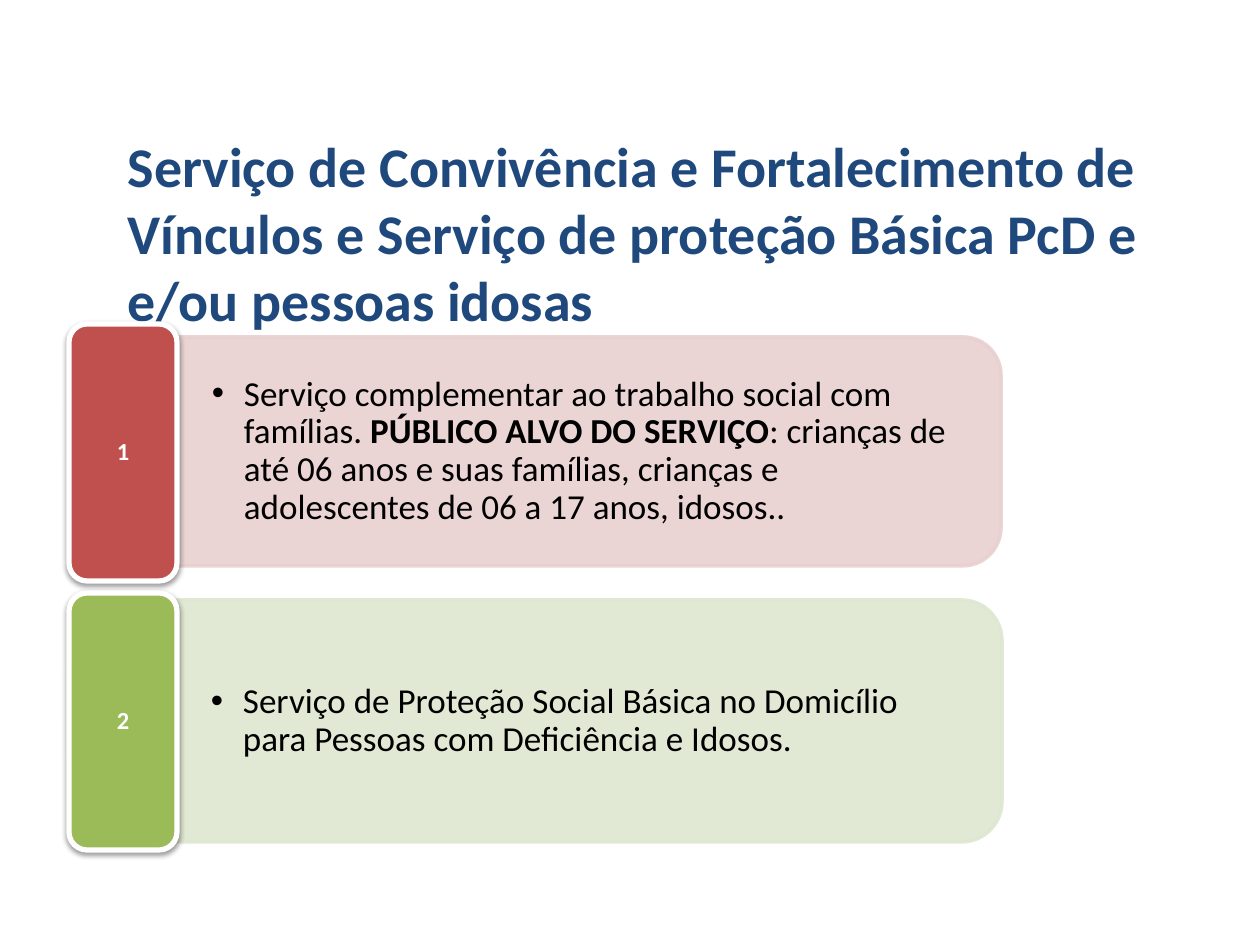
from lxml.etree import SubElement
from pptx import Presentation
from pptx.dml.color import RGBColor
from pptx.enum.shapes import MSO_SHAPE as Shape
from pptx.enum.text import MSO_ANCHOR as Anchor, MSO_AUTO_SIZE as AutoSize, PP_ALIGN as Align
from pptx.oxml.ns import qn
from pptx.util import Emu, Pt

NAVY = RGBColor(0x1F, 0x49, 0x7D)
RED = RGBColor(0xC0, 0x50, 0x4D)
PALE_RED = RGBColor(0xE8, 0xD0, 0xD0)
GREEN = RGBColor(0x9B, 0xBB, 0x59)
PALE_GREEN = RGBColor(0xDE, 0xE7, 0xD1)
BLACK = RGBColor(0, 0, 0)
WHITE = RGBColor(0xFF, 0xFF, 0xFF)
FONT = "Calibri"

HEADING = ("Serviço de Convivência e Fortalecimento de Vínculos e Serviço de "
           "proteção Básica PcD e e/ou pessoas idosas")
SERVICES = [
    ("1", RED, PALE_RED, (69, 324, 108, 257), (178, 337, 823, 229), [
        ("Serviço complementar ao trabalho social com famílias. ", False),
        ("PÚBLICO ALVO DO SERVIÇO", True),
        (": crianças de até 06 anos e suas famílias, crianças e adolescentes "
         "de 06 a 17 anos, idosos..", False)]),
    ("2", GREEN, PALE_GREEN, (69, 593, 108, 257), (177, 600, 825, 242), [
        ("Serviço de Proteção Social Básica no Domicílio para Pessoas com "
         "Deficiência e Idosos.", False)]),
]


def px(length):
    """Turn px at 126 to the inch into EMU."""
    return Emu(round(length * 914400 / 126))


def set_insets(frame, side, end):
    """Set the side and the top and bottom insets of a text frame."""
    frame.margin_left = frame.margin_right = px(side)
    frame.margin_top = frame.margin_bottom = px(end)


def add_run(paragraph, text, size, color, bold):
    """Add one formatted run."""
    run = paragraph.add_run()
    run.text = text
    run.font.name = FONT
    run.font.size = Pt(size)
    run.font.bold = bold
    run.font.color.rgb = color


def paint(shape, fill, line, width):
    """Give a shape its fill and outline, without a shadow."""
    shape.shadow.inherit = False
    shape.fill.solid()
    shape.fill.fore_color.rgb = fill
    shape.line.color.rgb = line
    shape.line.width = Pt(width)


def add_heading(slide, box):
    """Fill the title placeholder in the given box."""
    heading = slide.shapes.title
    heading.left, heading.top, heading.width, heading.height = map(px, box)
    frame = heading.text_frame
    frame.word_wrap = True
    frame.auto_size = AutoSize.SHAPE_TO_FIT_TEXT
    frame.vertical_anchor = Anchor.TOP
    paragraph = frame.paragraphs[0]
    paragraph.alignment = Align.LEFT
    add_run(paragraph, HEADING, 32, NAVY, True)


def add_panel(slide, box, tint):
    """Add the translucent panel, a top-rounded shape turned to the right."""
    left, top, width, height = box
    shift = (width - height) / 2
    panel = slide.shapes.add_shape(
        Shape.ROUND_2_SAME_RECTANGLE,
        *map(px, (left + shift, top - shift, height, width)))
    panel.rotation = 90
    paint(panel, tint, tint, 2)
    for color in panel._element.spPr.iter(qn("a:srgbClr")):
        SubElement(color, qn("a:alpha"), val="90000")


def add_description(slide, box, parts):
    """Add the bulleted description inside the panel's box."""
    left, top, width, height = box
    description = slide.shapes.add_textbox(
        *map(px, (left, top + 11, width - 12, height - 22)))
    frame = description.text_frame
    frame.word_wrap = True
    frame.vertical_anchor = Anchor.MIDDLE
    set_insets(frame, 34, 18)
    paragraph = frame.paragraphs[0]
    properties = paragraph._p.get_or_add_pPr()
    properties.set("marL", str(px(32)))
    properties.set("indent", str(-px(32)))
    SubElement(properties, qn("a:buFont"), typeface="Arial")
    SubElement(properties, qn("a:buChar"), char="•")
    paragraph.line_spacing = 0.9
    for text, bold in parts:
        add_run(paragraph, text, 20, BLACK, bold)


def add_number(slide, box, number, color):
    """Add the numbered tab with its soft shadow."""
    tab = slide.shapes.add_shape(Shape.ROUNDED_RECTANGLE, *map(px, box))
    paint(tab, color, WHITE, 3)
    effects = tab._element.spPr.find(qn("a:effectLst"))
    shadow = SubElement(effects, qn("a:outerShdw"), blurRad=str(Pt(3.1)),
                        dist=str(Pt(1.6)), dir="5400000", rotWithShape="0")
    shade = SubElement(shadow, qn("a:srgbClr"), val=str(BLACK))
    SubElement(shade, qn("a:alpha"), val="38000")
    frame = tab.text_frame
    frame.vertical_anchor = Anchor.MIDDLE
    set_insets(frame, 7, 4)
    paragraph = frame.paragraphs[0]
    paragraph.alignment = Align.CENTER
    paragraph.line_spacing = 0.9
    add_run(paragraph, number, 14, WHITE, True)


def main():
    """Build and save the slide."""
    deck = Presentation()
    deck.slide_width, deck.slide_height = px(1260), px(945)
    slide = deck.slides.add_slide(deck.slide_layouts[5])
    add_heading(slide, (115, 125, 1075, 285))
    for number, color, tint, tab_box, panel_box, parts in SERVICES:
        add_panel(slide, panel_box, tint)
        add_description(slide, panel_box, parts)
        add_number(slide, tab_box, number, color)
    deck.save("out.pptx")


if __name__ == "__main__":
    main()
